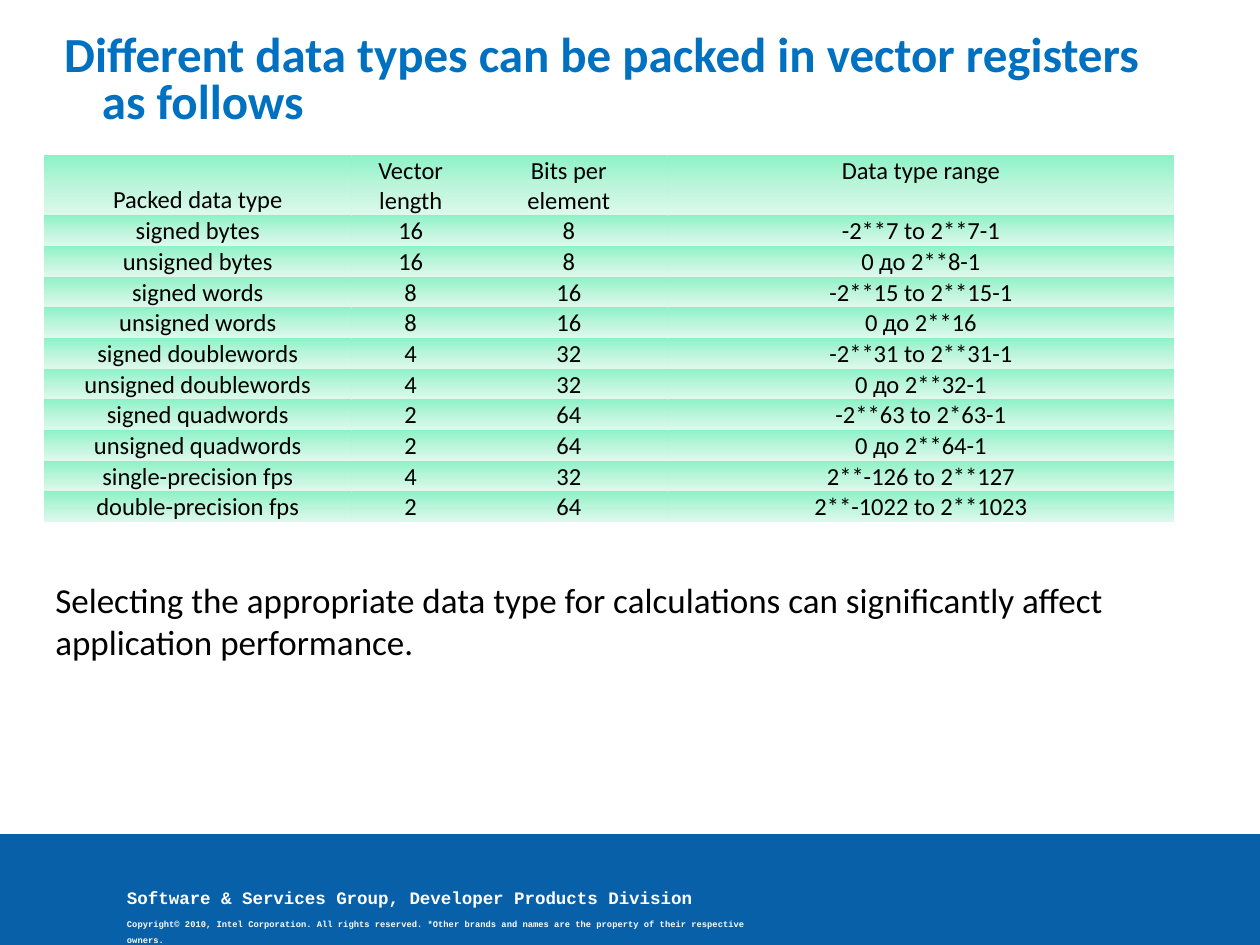
from dataclasses import dataclass, field

from lxml import etree
from pptx import Presentation
from pptx.dml.color import RGBColor
from pptx.enum.shapes import MSO_SHAPE
from pptx.enum.text import MSO_ANCHOR, PP_ALIGN
from pptx.oxml.ns import qn
from pptx.slide import Slide
from pptx.table import _Cell
from pptx.text.text import _Paragraph
from pptx.util import Inches, Pt

RECTANGLE = MSO_SHAPE.RECTANGLE
CENTER = PP_ALIGN.CENTER
TOP, BOTTOM = MSO_ANCHOR.TOP, MSO_ANCHOR.BOTTOM

COLORS = {
    "footer": "0860A8",
    "footer_text": "FFFFFF",
    "title": "0070C0",
    "text": "000000",
    "cell_top": "8CF2C6",
    "cell_middle": "BAF5DA",
    "cell_bottom": "DEF9EC",
}
CELL_GRADIENT = {0: "cell_top", 50: "cell_middle", 100: "cell_bottom"}
PLAIN_TABLE_STYLE = "{2D5ABB26-0587-4C30-8999-92F81FD0307C}"

COLUMN_WIDTHS = (2.44, 0.94, 1.57, 4.02)
HEADER_HEIGHT, ROW_HEIGHT = 0.47, 0.24
HEADERS = ("Packed data type", "Vector\nlength", "Bits per\nelement", "Data type range")
DATA_TYPES = (
    ("signed bytes", "16", "8", "-2**7 to 2**7-1"),
    ("unsigned bytes", "16", "8", "0 до 2**8-1"),
    ("signed words", "8", "16", "-2**15 to 2**15-1"),
    ("unsigned words", "8", "16", "0 до 2**16"),
    ("signed doublewords", "4", "32", "-2**31 to 2**31-1"),
    ("unsigned doublewords", "4", "32", "0 до 2**32-1"),
    ("signed quadwords", "2", "64", "-2**63 to 2*63-1"),
    ("unsigned quadwords", "2", "64", "0 до 2**64-1"),
    ("single-precision fps", "4", "32", "2**-126 to 2**127"),
    ("double-precision fps", "2", "64", "2**-1022 to 2**1023"),
)


@dataclass
class Line:
    text: str
    color: str
    font: dict
    spacing: dict = field(default_factory=dict)
    indent: dict = field(default_factory=dict)


@dataclass
class TextBlock:
    left: float
    top: float
    width: float
    height: float
    lines: list[Line]
    frame: dict


FOOTER_FONT = {"name": "Courier New", "bold": True}
NO_MARGINS = dict.fromkeys(
    ("margin_left", "margin_top", "margin_right", "margin_bottom"), Inches(0)
)
CELL_FORMAT = {
    "margin_left": Inches(0.01),
    "margin_top": Inches(0.01),
    "margin_right": Inches(0.01),
    "margin_bottom": Inches(0),
}
CELL_FONT = {"name": "Calibri", "size": Pt(14), "bold": False}

FOOTER = TextBlock(0.91, 6.96, 5.13, 0.45, [
    Line("Software & Services Group, Developer Products Division", "footer_text",
         FOOTER_FONT | {"size": Pt(10)}, {"line_spacing": 1.2}),
    Line("Copyright© 2010, Intel Corporation. All rights reserved. "
         "*Other brands and names are the property of their respective owners.",
         "footer_text", FOOTER_FONT | {"size": Pt(5)},
         {"line_spacing": 1.5, "space_before": Pt(3.1)}),
], {"word_wrap": False})
TITLE = TextBlock(0.43, 0.28, 9, 0.87, [
    Line("Different data types can be packed in vector registers as follows", "title",
         {"name": "Calibri", "size": Pt(28), "bold": True}, {"line_spacing": 0.8},
         {"marL": Inches(0.38), "indent": Inches(-0.3)}),
], {"word_wrap": True} | NO_MARGINS)
CONCLUSION = TextBlock(0.34, 4.54, 8.82, 0.77, [
    Line("Selecting the appropriate data type for calculations can significantly "
         "affect application performance.", "text", {"name": "Calibri", "size": Pt(20)}),
], {"word_wrap": True})


def apply_format(target: object, values: dict) -> None:
    for name, value in values.items():
        setattr(target, name, value)


def style_font(paragraph: _Paragraph, font: dict, color: str) -> None:
    for run in paragraph.runs:
        apply_format(run.font, font)
        run.font.color.rgb = RGBColor.from_string(COLORS[color])


def draw_text(slide: Slide, block: TextBlock) -> None:
    bounds = map(Inches, (block.left, block.top, block.width, block.height))
    frame = slide.shapes.add_textbox(*bounds).text_frame
    apply_format(frame, block.frame)
    frame.text = "\n".join(line.text for line in block.lines)
    for paragraph, line in zip(frame.paragraphs, block.lines):
        apply_format(paragraph, line.spacing)
        for name, length in line.indent.items():
            paragraph._p.get_or_add_pPr().set(name, str(length))
        style_font(paragraph, line.font, line.color)


def draw_footer_band(slide: Slide) -> None:
    band = slide.shapes.add_shape(RECTANGLE, *map(Inches, (0, 6.62, 10, 0.88)))
    band.shadow.inherit = False
    band.fill.solid()
    band.fill.fore_color.rgb = RGBColor.from_string(COLORS["footer"])
    band.line.fill.background()


def fill_gradient(cell: _Cell) -> None:
    gradient = etree.SubElement(
        cell._tc.get_or_add_tcPr(), qn("a:gradFill"), rotWithShape="1"
    )
    stops = etree.SubElement(gradient, qn("a:gsLst"))
    for percent, color in CELL_GRADIENT.items():
        stop = etree.SubElement(stops, qn("a:gs"), pos=str(percent * 1000))
        etree.SubElement(stop, qn("a:srgbClr"), val=COLORS[color])
    etree.SubElement(gradient, qn("a:lin"), ang="5400000", scaled="0")


def draw_cell(cell: _Cell, text: str, anchor: MSO_ANCHOR) -> None:
    cell.text = text
    apply_format(cell, CELL_FORMAT | {"vertical_anchor": anchor})
    fill_gradient(cell)
    for paragraph in cell.text_frame.paragraphs:
        paragraph.alignment = CENTER
        style_font(paragraph, CELL_FONT, "text")


def draw_data_types(slide: Slide) -> None:
    rows = (HEADERS, *DATA_TYPES)
    heights = (HEADER_HEIGHT, *[ROW_HEIGHT] * len(DATA_TYPES))
    bounds = map(Inches, (0.35, 1.23, sum(COLUMN_WIDTHS), sum(heights)))
    table = slide.shapes.add_table(len(rows), len(HEADERS), *bounds).table
    apply_format(table, {"first_row": False, "horz_banding": False})
    table._tbl.tblPr.find(qn("a:tableStyleId")).text = PLAIN_TABLE_STYLE
    for column, width in zip(table.columns, COLUMN_WIDTHS):
        column.width = Inches(width)
    for row, height, texts in zip(table.rows, heights, rows):
        row.height = Inches(height)
        for cell, text in zip(row.cells, texts):
            draw_cell(cell, text, TOP if text == HEADERS[-1] else BOTTOM)


def main() -> None:
    presentation = Presentation()
    apply_format(
        presentation, {"slide_width": Inches(10), "slide_height": Inches(7.5)}
    )
    slide = presentation.slides.add_slide(presentation.slide_layouts[6])
    draw_footer_band(slide)
    draw_text(slide, FOOTER)
    draw_text(slide, TITLE)
    draw_data_types(slide)
    draw_text(slide, CONCLUSION)
    presentation.save("out.pptx")


if __name__ == "__main__":
    main()
